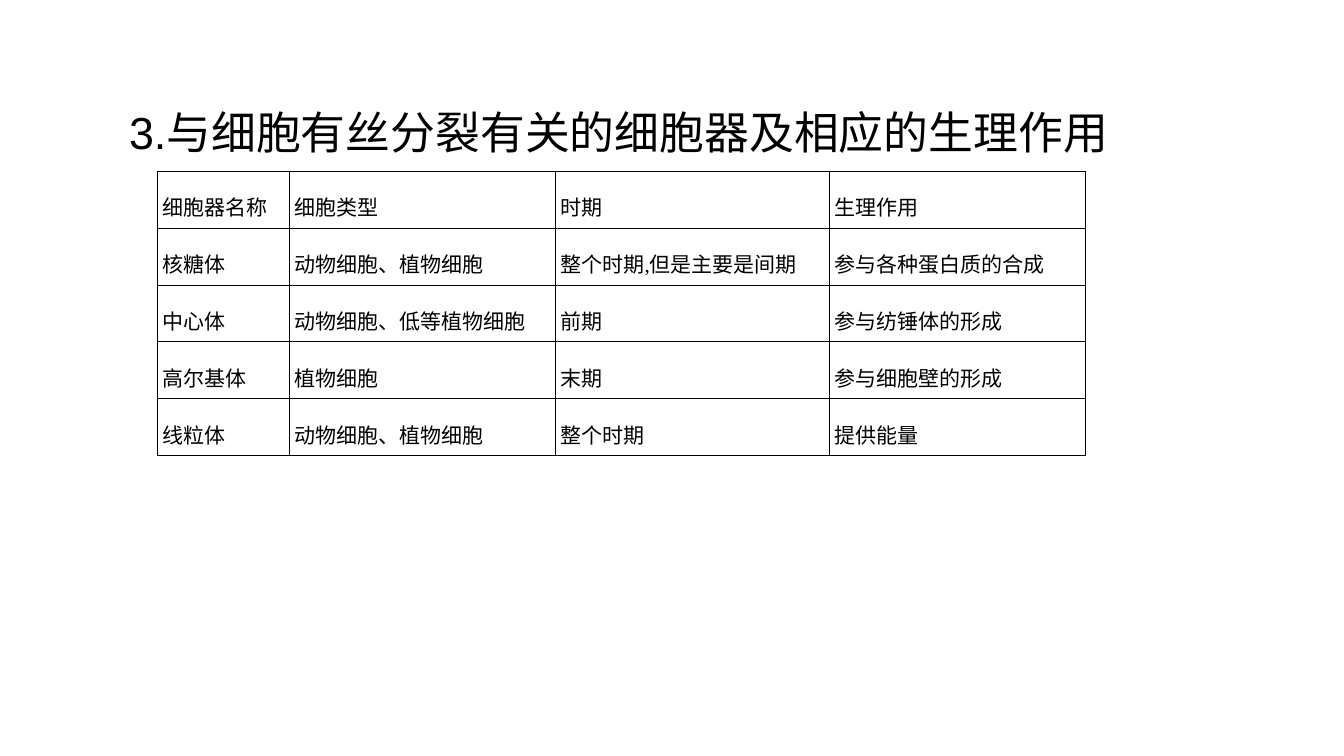
from lxml.etree import SubElement
from pptx import Presentation
from pptx.dml.color import RGBColor
from pptx.enum.text import MSO_AUTO_SIZE as Fit
from pptx.oxml.ns import qn
from pptx.util import Pt

PX = 9144  # EMU per px, 100 px to the inch
BLACK = RGBColor(0x00, 0x00, 0x00)

TITLE = "3.与细胞有丝分裂有关的细胞器及相应的生理作用"
COLS = [131, 264, 272, 254]
ROWS = [
    ["细胞器名称", "细胞类型", "时期", "生理作用"],
    ["核糖体", "动物细胞、植物细胞", "整个时期,但是主要是间期", "参与各种蛋白质的合成"],
    ["中心体", "动物细胞、低等植物细胞", "前期", "参与纺锤体的形成"],
    ["高尔基体", "植物细胞", "末期", "参与细胞壁的形成"],
    ["线粒体", "动物细胞、植物细胞", "整个时期", "提供能量"],
]


def write(frame, text, font="Arial", size=15, color=BLACK, space=1.5):
    para = frame.paragraphs[0]
    para.line_spacing = space
    run = para.add_run()
    run.text = text
    run.font.name = font
    run.font.size = Pt(size)
    run.font.color.rgb = color


class Page:
    """Holds the table style and the current slide."""
    font = "Times New Roman"
    pad = 5
    line = 0.75

    def __init__(self, deck):
        self.slide = deck.slides.add_slide(deck.slide_layouts[6])

    def text(self, box, text, **style):
        shape = self.slide.shapes.add_textbox(*(n * PX for n in box))
        frame = shape.text_frame
        frame.margin_left = frame.margin_right = 0
        frame.margin_top = frame.margin_bottom = 0
        frame.word_wrap = True
        frame.auto_size = Fit.SHAPE_TO_FIT_TEXT
        write(frame, text, **style)

    def border(self, cell):
        props = cell._tc.get_or_add_tcPr()
        for side in ("lnL", "lnR", "lnT", "lnB"):
            edge = SubElement(props, qn("a:" + side), w=str(Pt(self.line)))
            fill = SubElement(edge, qn("a:solidFill"))
            SubElement(fill, qn("a:srgbClr"), val=str(BLACK))

    def table(self, left, top, high, cols, rows):
        count = len(rows)
        frame = self.slide.shapes.add_table(
            count, len(cols), left * PX, top * PX, sum(cols) * PX, high * PX)
        table = frame.table
        table.first_row = table.horz_banding = False
        for col, wide in zip(table.columns, cols):
            col.width = wide * PX
        for row, texts in zip(table.rows, rows):
            row.height = high * PX // count
            for cell, text in zip(row.cells, texts):
                cell.margin_left = cell.margin_right = self.pad * PX
                cell.margin_top = cell.margin_bottom = self.pad * PX
                self.border(cell)
                cell.fill.background()
                write(cell.text_frame, text, font=self.font)


def main():
    deck = Presentation()
    deck.slide_width, deck.slide_height = 1333 * PX, 750 * PX
    page = Page(deck)
    # Heading
    page.text((128, 77, 988, 73), TITLE, size=32)
    # Organelles and their roles
    page.table(156, 170, 282, COLS, ROWS)
    deck.save("out.pptx")


if __name__ == "__main__":
    main()
